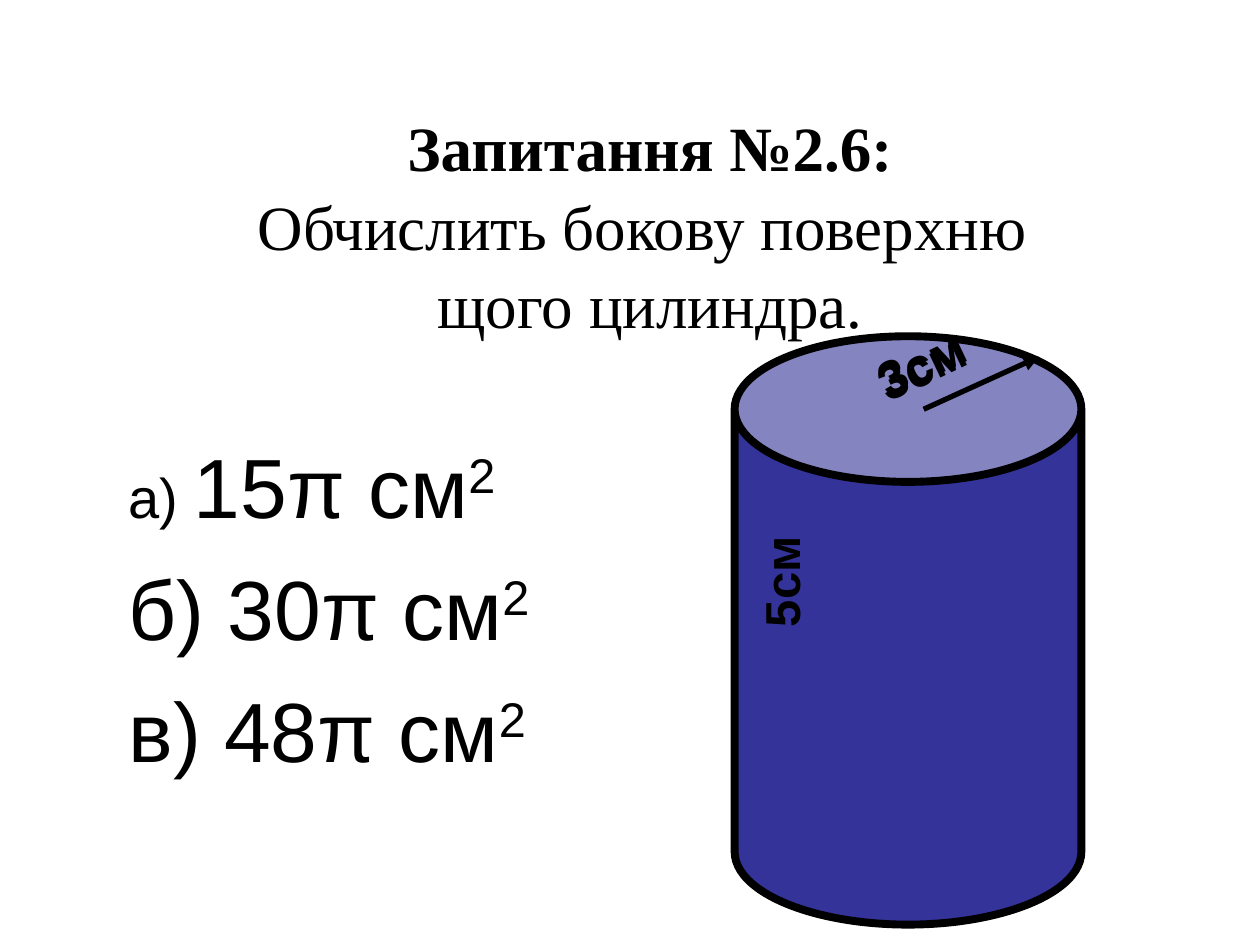
from lxml import etree
from pptx import Presentation
from pptx.dml.color import RGBColor
from pptx.enum.shapes import MSO_CONNECTOR, MSO_SHAPE
from pptx.enum.text import MSO_ANCHOR, MSO_AUTO_SIZE, PP_ALIGN
from pptx.oxml.ns import qn
from pptx.util import Cm, Pt

CAN = MSO_SHAPE.CAN
LINE = MSO_CONNECTOR.STRAIGHT
MIDDLE, TOP = MSO_ANCHOR.MIDDLE, MSO_ANCHOR.TOP
GROW, FIXED = MSO_AUTO_SIZE.SHAPE_TO_FIT_TEXT, MSO_AUTO_SIZE.NONE
CENTER, LEFT = PP_ALIGN.CENTER, PP_ALIGN.LEFT
BLACK, BLUE = "000000", "333399"
SANS, SERIF = "Arial", "Times New Roman"


def color(code):
    """Turn a hex string into a colour."""
    return RGBColor.from_string(code)


def add_run(para, text, size, face=SANS, bold=False, high=False):
    """Add one formatted run, raised if high."""
    run = para.add_run()
    run.text = text
    font = run.font
    font.size, font.name, font.bold = Pt(size), face, bold
    font.color.rgb = color(BLACK)
    if high:
        run._r.get_or_add_rPr().set("baseline", "30000")


def add_title(slide):
    """Place and fill the title with the question."""
    title = slide.shapes.title
    title.left, title.top = Cm(2.31), Cm(1.93)
    title.width, title.height = Cm(21.59), Cm(5.16)
    frame = title.text_frame
    frame.word_wrap, frame.auto_size = True, FIXED
    frame.vertical_anchor = MIDDLE
    para = frame.paragraphs[0]
    para.alignment, para.line_spacing = CENTER, 1.04
    add_run(para, "Запитання №2.6:", 36, SERIF, True)
    for text in ("Обчислить бокову поверхню ", "щого цилиндра."):
        para.add_line_break()
        add_run(para, text, 36, SERIF)


def add_list(slide, rows):
    """Add the answers with their raised powers."""
    box = slide.shapes.add_textbox(Cm(2.34), Cm(8.64), Cm(10.49), Cm(8.28))
    frame = box.text_frame
    frame.word_wrap, frame.vertical_anchor = True, TOP
    for i, (mark, size, text) in enumerate(rows):
        para = frame.add_paragraph() if i else frame.paragraphs[0]
        para.alignment = LEFT
        if i:
            para.space_before = Pt(12)
        props = para._p.get_or_add_pPr()
        props.set("marL", str(Cm(0.97)))
        props.set("indent", str(-Cm(0.97)))
        add_run(para, mark, size)
        add_run(para, text, 48)
        add_run(para, "2", 48, high=True)


def add_can(slide):
    """Draw the cylinder."""
    can = slide.shapes.add_shape(CAN, Cm(14.81), Cm(6.78), Cm(6.99), Cm(11.86))
    can.shadow.inherit = False
    can.adjustments[0] = 0.42
    can.fill.solid()
    can.fill.fore_color.rgb = color(BLUE)
    can.line.color.rgb = color(BLACK)
    can.line.width = Pt(4.5)


def add_arrow(slide):
    """Draw the radius as an arrow."""
    arrow = slide.shapes.add_connector(
        LINE, Cm(18.62), Cm(8.25), Cm(20.95), Cm(7.19))
    arrow.line.color.rgb = color(BLACK)
    arrow.line.width = Pt(3)
    etree.SubElement(arrow.line._get_or_add_ln(), qn("a:tailEnd"), type="triangle")
    etree.SubElement(arrow._element.spPr, qn("a:effectLst"))


def add_label(slide, text, left, top, width, angle):
    """Add a turned length label."""
    box = slide.shapes.add_textbox(Cm(left), Cm(top), Cm(width), Cm(1.45))
    box.rotation = angle
    frame = box.text_frame
    frame.word_wrap, frame.auto_size = True, GROW
    add_run(frame.paragraphs[0], text, 28, bold=True)


def main():
    """Build and save the slide."""
    deck = Presentation()
    deck.slide_width, deck.slide_height = Cm(25.4), Cm(19.05)
    slide = deck.slides.add_slide(deck.slide_layouts[5])
    add_title(slide)
    add_list(slide, [("а) ", 32, "15π см"),
                     ("б) ", 48, "30π см"),
                     ("в) ", 48, "48π см")])
    add_can(slide)
    add_arrow(slide)
    add_label(slide, "5см", 14.27, 10.69, 2.95, 270)
    for top in (6.43, 6.35):
        add_label(slide, "3см", 17.35, top, 3.38, 334.6)
    deck.save("out.pptx")


if __name__ == "__main__":
    main()
